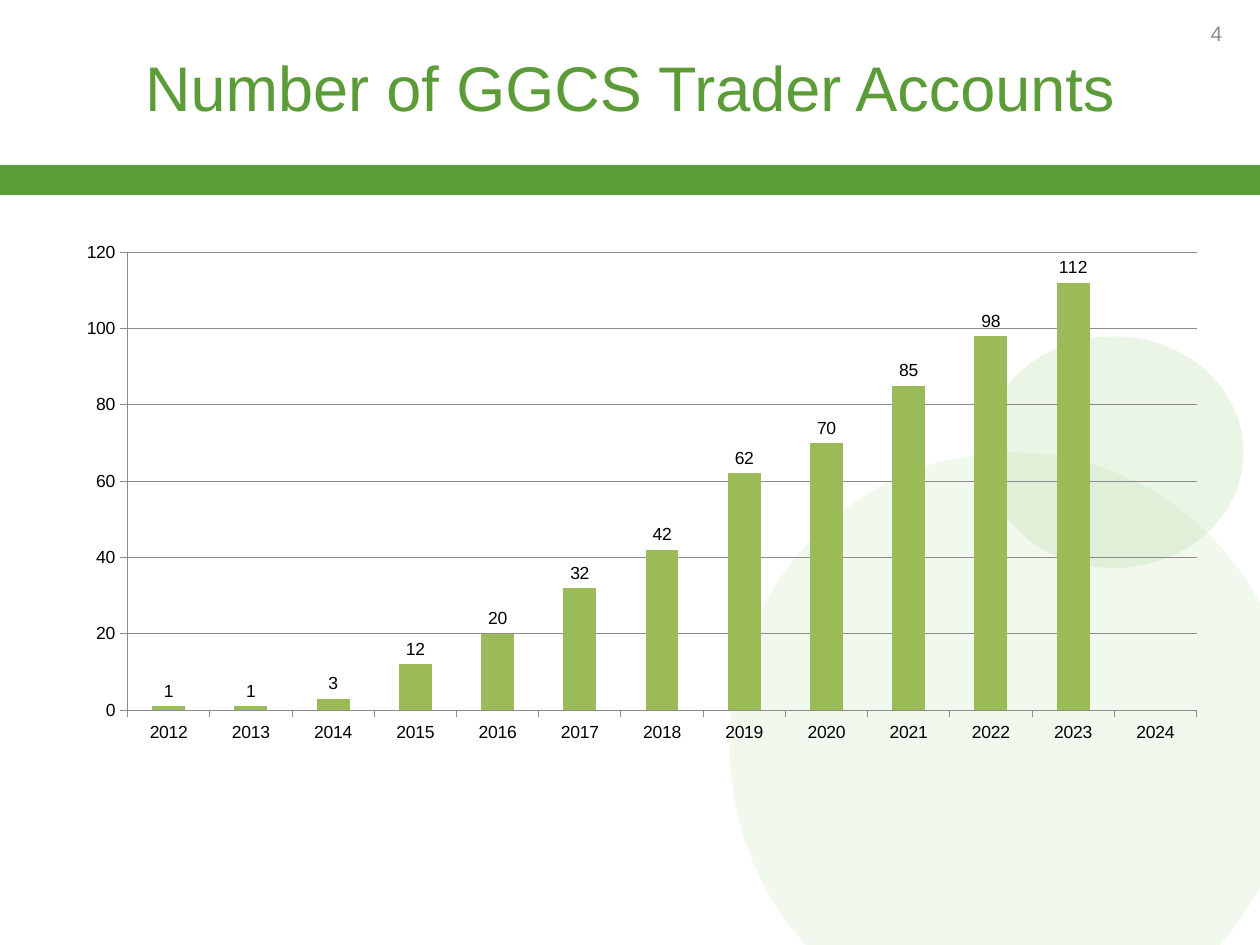
"""Build a slide with a column chart of GGCS trader accounts by year."""
import pptx
import pptx.chart.data
import pptx.dml.color
import pptx.enum.chart
import pptx.enum.shapes
import pptx.enum.text
import pptx.oxml
import pptx.oxml.ns
import pptx.util

Pt = pptx.util.Pt
RGBColor = pptx.dml.color.RGBColor
SHAPE = pptx.enum.shapes.MSO_SHAPE
ALIGN = pptx.enum.text.PP_ALIGN
qn = pptx.oxml.ns.qn

TITLE = "Number of GGCS Trader Accounts"
PAGE = "4"
FIRST_YEAR = 2012
ACCOUNTS = [1, 1, 3, 12, 20, 32, 42, 62, 70, 85, 98, 112, None]

FONT = "Arial"
GREEN = RGBColor(0x5B, 0x9C, 0x38)
PALE = RGBColor(0xB3, 0xDC, 0x9C)
BAR = RGBColor(0x9B, 0xBB, 0x59)
GREY = RGBColor(0x8C, 0x8C, 0x8C)
BLACK = RGBColor(0, 0, 0)

DECOR = [
    (SHAPE.OVAL, (416.9, 258.5, 323.3, 334.8), PALE, 18),
    (SHAPE.RECTANGLE, (0, 94.3, 720, 17.3), GREEN, 100),
    (SHAPE.OVAL, (562.3, 192.2, 148.3, 132.5), PALE, 26),
]
TITLE_BOX = (36, 4.3, 648, 90)
PAGE_BOX = (537.8, 4.3, 167.8, 28.8)
CHART_BOX = (36, 124.6, 648, 324.7)
PLOT = {"x": 0.057, "y": 0.06, "w": 0.943, "h": 0.806}


def points(box):
    return [Pt(v) for v in box]


def style_font(font, size, color):
    font.name = FONT
    font.size = Pt(size)
    font.color.rgb = color


def style_line(line):
    line.color.rgb = GREY
    line.width = Pt(0.5)


def add_decor(slide, kind, box, color, opacity):
    sp = slide.shapes.add_shape(kind, *points(box))
    sp.shadow.inherit = False
    sp.fill.solid()
    sp.fill.fore_color.rgb = color
    sp.line.fill.background()
    if opacity < 100:
        clr = sp.fill._xPr.find(".//" + qn("a:srgbClr"))
        alpha = pptx.oxml.parse_xml(f'<a:alpha {pptx.oxml.ns.nsdecls("a")} val="{opacity * 1000}"/>')
        clr.append(alpha)


def write_line(sp, text, size, color, align):
    tf = sp.text_frame
    tf.word_wrap = True
    tf.auto_size = pptx.enum.text.MSO_AUTO_SIZE.NONE
    tf.vertical_anchor = pptx.enum.text.MSO_ANCHOR.MIDDLE
    p = tf.paragraphs[0]
    p.alignment = align
    r = p.add_run()
    r.text = text
    style_font(r.font, size, color)


def set_plot_area(chart):
    parts = '<c:layoutTarget val="inner"/><c:xMode val="edge"/><c:yMode val="edge"/>'
    parts += "".join(f'<c:{key} val="{value}"/>' for key, value in PLOT.items())
    layout = pptx.oxml.parse_xml(
        f'<c:layout {pptx.oxml.ns.nsdecls("c")}><c:manualLayout>{parts}</c:manualLayout></c:layout>')
    area = chart._chartSpace.chart.plotArea
    for old in area.findall(qn("c:layout")):
        area.remove(old)
    area.insert(0, layout)


def add_accounts_chart(slide):
    data = pptx.chart.data.CategoryChartData()
    data.categories = [str(FIRST_YEAR + i) for i in range(len(ACCOUNTS))]
    data.add_series("Series 1", ACCOUNTS)
    kind = pptx.enum.chart.XL_CHART_TYPE.COLUMN_CLUSTERED
    chart = slide.shapes.add_chart(kind, *points(CHART_BOX), data).chart
    chart.has_legend = False
    chart.has_title = False
    style_font(chart.font, 10, BLACK)
    set_plot_area(chart)

    for axis in (chart.category_axis, chart.value_axis):
        axis.major_tick_mark = pptx.enum.chart.XL_TICK_MARK.OUTSIDE
        axis.minor_tick_mark = pptx.enum.chart.XL_TICK_MARK.NONE
        style_font(axis.tick_labels.font, 10, BLACK)
        style_line(axis.format.line)
    value_axis = chart.value_axis
    value_axis.minimum_scale, value_axis.maximum_scale, value_axis.major_unit = 0, 120, 20
    value_axis.has_major_gridlines = True
    style_line(value_axis.major_gridlines.format.line)

    plot = chart.plots[0]
    plot.gap_width = 150
    plot.vary_by_categories = False
    series = plot.series[0]
    series.format.fill.solid()
    series.format.fill.fore_color.rgb = BAR
    labels = series.data_labels
    labels.show_value = True
    labels.position = pptx.enum.chart.XL_LABEL_POSITION.OUTSIDE_END
    style_font(labels.font, 10, BLACK)


def main():
    prs = pptx.Presentation()
    prs.slide_width, prs.slide_height = Pt(720), Pt(540)
    slide = prs.slides.add_slide(prs.slide_layouts[5])
    for item in DECOR:
        add_decor(slide, *item)
    title = slide.shapes.title
    title.left, title.top, title.width, title.height = points(TITLE_BOX)
    write_line(title, TITLE, 36, GREEN, ALIGN.CENTER)
    page = slide.shapes.add_textbox(*points(PAGE_BOX))
    write_line(page, PAGE, 12, GREY, ALIGN.RIGHT)
    page.text_frame.paragraphs[0].space_after = Pt(6)
    add_accounts_chart(slide)
    prs.save("out.pptx")


if __name__ == "__main__":
    main()
